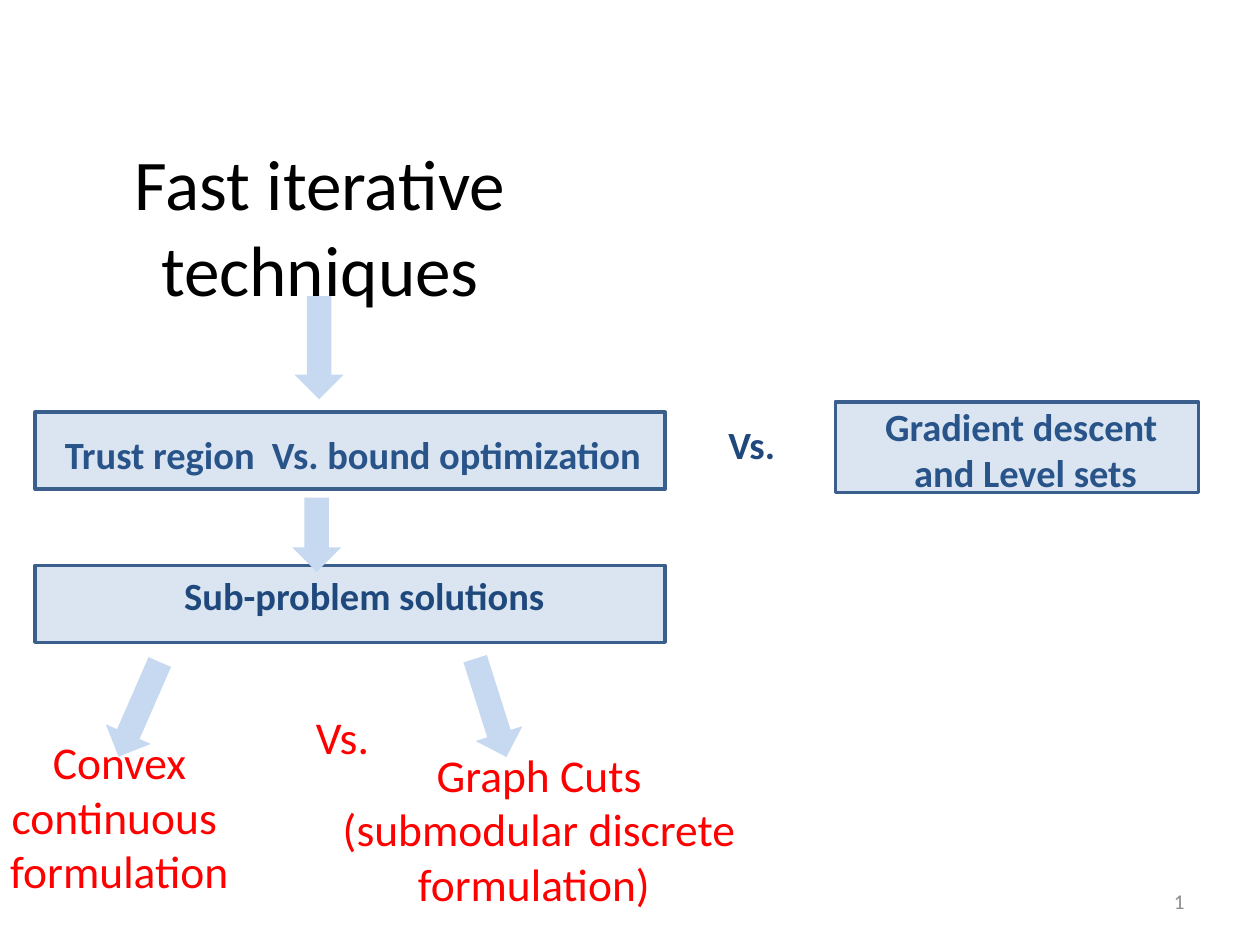
from lxml.etree import SubElement
from pptx import Presentation
from pptx.dml.color import RGBColor
from pptx.enum.shapes import MSO_SHAPE
from pptx.enum.text import MSO_ANCHOR, MSO_AUTO_SIZE, PP_ALIGN
from pptx.oxml.ns import qn
from pptx.util import Cm, Pt

FONT = "Calibri"
BLACK = RGBColor(0x00, 0x00, 0x00)
NAVY = RGBColor(0x1F, 0x49, 0x7D)
RED = RGBColor(0xFF, 0x00, 0x00)
GRAY = RGBColor(0x8C, 0x8C, 0x8C)
BOX_FILL = RGBColor(0x4F, 0x81, 0xBD)
BOX_LINE = RGBColor(0x3A, 0x5F, 0x8C)
ARROW_FILL = RGBColor(0xC6, 0xD9, 0xF1)

# Content: positions and sizes in centimetres
TITLE = [" Fast iterative ", "techniques"]
TITLE_AREA = (-1.35, 2.95, 15.6, 3.18)
SLIDE_NUMBER = "1"
SLIDE_NUMBER_AREA = (18.21, 17.65, 5.92, 1.02)

# Labels under the translucent boxes: lines, area
COVERED_LABELS = [
    (["Trust region  Vs. bound optimization"], (0.28, 8.56, 13.67, 2.13)),
    (["Gradient descent ", "and Level sets"], (13.84, 8, 13.67, 2.13)),
]
BOXES = [(0.71, 8.31, 12.7, 1.55), (0.71, 11.4, 12.7, 1.55), (16.84, 8.1, 7.32, 1.83)]
TOP_LABELS = [
    (["Sub-problem solutions"], (0.51, 11.4, 13.67, 2.13)),
    (["Vs."], (12.12, 8.36, 6.07, 1.17)),
]

# Arrows: left, top, height, rotation
ARROW_WIDTH = 0.99
ARROWS = [
    (5.94, 5.97, 2.08, 0),
    (5.89, 10.03, 1.5, 0),
    (2.31, 13.26, 2.08, 23.6),
    (9.4, 13.23, 2.08, 342.4),
]

# Red alternatives: lines, left, top
CHOICE_SIZE = (9.04, 3.18)
CHOICE_TOP_INSET = 1.25
CHOICES = [
    (["Convex", "continuous ", " formulation "], -2.11, 14.3),
    (["Graph Cuts", "(submodular discrete formulation) "], 6.35, 14.55),
    (["Vs. "], 2.49, 12.7),
]


def to_cm(area):
    return [Cm(value) for value in area]


def write_lines(shape, lines, size, color, bold=False,
                align=PP_ALIGN.CENTER, anchor=MSO_ANCHOR.MIDDLE):
    frame = shape.text_frame
    frame.text = "\n".join(lines)
    frame.word_wrap = True
    frame.auto_size = MSO_AUTO_SIZE.NONE
    frame.vertical_anchor = anchor
    for paragraph in frame.paragraphs:
        paragraph.alignment = align
        for run in paragraph.runs:
            run.font.name = FONT
            run.font.size = Pt(size)
            run.font.bold = bold
            run.font.color.rgb = color


def add_text(slide, area, lines, size, color, **options):
    text_box = slide.shapes.add_textbox(*to_cm(area))
    write_lines(text_box, lines, size, color, **options)
    return text_box


def add_labels(slide, labels):
    for lines, area in labels:
        add_text(slide, area, lines, 22, NAVY, bold=True, anchor=MSO_ANCHOR.TOP)


def add_filled(slide, kind, area, color):
    shape = slide.shapes.add_shape(kind, *to_cm(area))
    shape.shadow.inherit = False
    shape.fill.solid()
    shape.fill.fore_color.rgb = color
    return shape


def add_box(slide, area):
    box = add_filled(slide, MSO_SHAPE.RECTANGLE, area, BOX_FILL)
    box.line.color.rgb = BOX_LINE
    box.line.width = Pt(2)
    fill_color = box.fill._xPr.find(qn("a:solidFill"))[0]
    SubElement(fill_color, qn("a:alpha"), val="20000")


def add_arrow(slide, left, top, height, rotation):
    area = (left, top, ARROW_WIDTH, height)
    arrow = add_filled(slide, MSO_SHAPE.DOWN_ARROW, area, ARROW_FILL)
    arrow.line.fill.background()
    arrow.rotation = rotation


def main():
    presentation = Presentation()
    presentation.slide_width, presentation.slide_height = Cm(25.4), Cm(19.05)
    slide = presentation.slides.add_slide(presentation.slide_layouts[5])

    # Title and slide number
    title = slide.shapes.title
    title.left, title.top, title.width, title.height = to_cm(TITLE_AREA)
    write_lines(title, TITLE, 40.7, BLACK)
    add_text(slide, SLIDE_NUMBER_AREA, [SLIDE_NUMBER], 12, GRAY, align=PP_ALIGN.RIGHT)

    # Method boxes, arrows and their labels
    add_labels(slide, COVERED_LABELS)
    for area in BOXES:
        add_box(slide, area)
    for arrow in ARROWS:
        add_arrow(slide, *arrow)
    add_labels(slide, TOP_LABELS)

    # Alternatives for the sub-problem
    for lines, left, top in CHOICES:
        choice = add_text(slide, (left, top, *CHOICE_SIZE), lines, 26, RED)
        choice.text_frame.margin_top = Cm(CHOICE_TOP_INSET)

    presentation.save("out.pptx")


if __name__ == "__main__":
    main()
